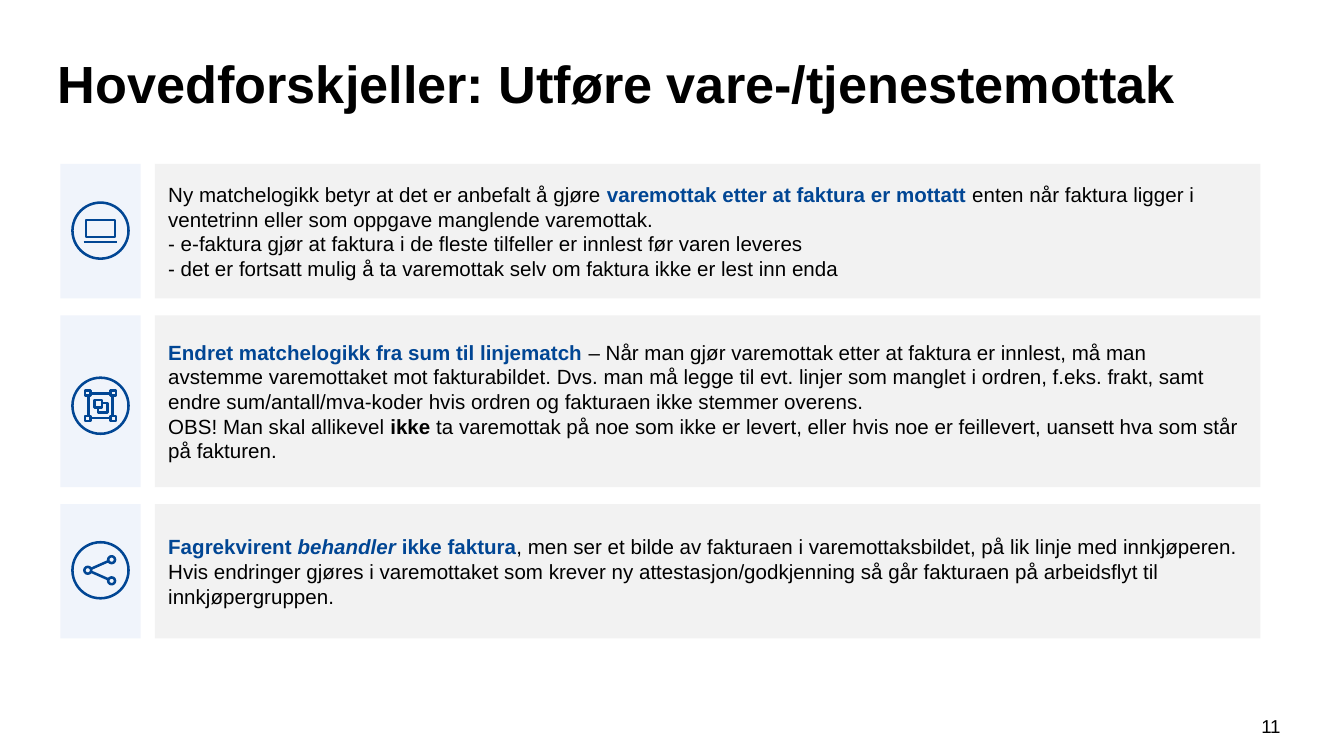
"""Build a slide on the main differences when receiving goods and services."""
from lxml.etree import SubElement
from pptx import Presentation
from pptx.dml.color import RGBColor
from pptx.enum.shapes import MSO_CONNECTOR as Connector, MSO_SHAPE as Shape
from pptx.enum.text import MSO_ANCHOR as Anchor, MSO_AUTO_SIZE as AutoSize, PP_ALIGN as Align
from pptx.oxml.ns import qn
from pptx.util import Cm, Pt

BLACK = RGBColor(0x00, 0x00, 0x00)
BLUE = RGBColor(0x01, 0x46, 0x94)
GREY = RGBColor(0xF2, 0xF2, 0xF2)
PALE_BLUE = RGBColor(0xF0, 0xF4, 0xFB)
STROKE = Pt(1.35)


def add_run(paragraph, text, size=11, color=BLACK, bold=False, italic=False):
    run = paragraph.add_run()
    run.text = text
    font = run.font
    font.name, font.size, font.bold, font.italic = "Arial", Pt(size), bold, italic
    font.color.rgb = color


def add_shape(kind, left, top, width, height, fill, line=None):
    shape = slide.shapes.add_shape(kind, Cm(left), Cm(top), Cm(width), Cm(height))
    shape.shadow.inherit = False
    shape.fill.solid()
    shape.fill.fore_color.rgb = fill
    if line is None:
        shape.line.fill.background()
    else:
        shape.line.color.rgb = line
        shape.line.width = STROKE
    return shape


presentation = Presentation()
presentation.slide_width, presentation.slide_height = Cm(25.4), Cm(14.29)
slide = presentation.slides.add_slide(presentation.slide_layouts[5])

title = slide.shapes.title
title.left, title.top, title.width, title.height = Cm(0.84), Cm(0.84), Cm(23.39), Cm(1.45)
title.text_frame.auto_size = AutoSize.NONE
title.text_frame.vertical_anchor = Anchor.MIDDLE
paragraph = title.text_frame.paragraphs[0]
paragraph.alignment = Align.LEFT
add_run(paragraph, "Hovedforskjeller: Utføre vare-/tjenestemottak", size=28, bold=True)

number_box = slide.shapes.add_textbox(Cm(23.55), Cm(13.39), Cm(0.94), Cm(0.76))
number_box.text_frame.word_wrap = True
paragraph = number_box.text_frame.paragraphs[0]
paragraph.alignment = Align.CENTER
add_run(paragraph, "11", size=10)

PLAIN = {}
BOLD = {"bold": True}
KEY = {"bold": True, "color": BLUE}
KEY_ITALIC = {**KEY, "italic": True}

laptop = {
    "center": 4.36,
    "lines": [[(-0.32, 0.21), (0.32, 0.21)]],
    "outlines": [(Shape.RECTANGLE, 0, -0.04, 0.55, 0.32)],
}
frame = {
    "center": 7.67,
    "lines": [],
    "outlines": [(Shape.RECTANGLE, 0, 0, 0.46, 0.46)]
    + [(Shape.RECTANGLE, x, y, 0.1, 0.1) for x in (-0.24, 0.24) for y in (-0.24, 0.24)]
    + [(Shape.RECTANGLE, 0.04, 0.04, 0.18, 0.18), (Shape.RECTANGLE, -0.04, -0.04, 0.14, 0.14)],
}
network = {
    "center": 10.78,
    "lines": [[(0.21, -0.2), (-0.24, 0), (0.21, 0.2)]],
    "outlines": [(Shape.OVAL, x, y, 0.13, 0.13) for x, y in ((-0.24, 0), (0.21, -0.2), (0.21, 0.2))],
}

rows = [
    (2.54, laptop, [
        [("Ny matchelogikk betyr at det er anbefalt å gjøre ", PLAIN),
         ("varemottak etter at faktura er mottatt ", KEY),
         ("enten når faktura ligger i ventetrinn eller som oppgave manglende varemottak.", PLAIN)],
        [("- e-faktura gjør at faktura i de fleste tilfeller er innlest før varen leveres", PLAIN)],
        [("- det er fortsatt mulig å ta varemottak selv om faktura ikke er lest inn enda", PLAIN)],
    ]),
    (3.25, frame, [
        [("Endret matchelogikk fra sum til linjematch ", KEY),
         ("– Når man gjør varemottak etter at faktura er innlest, må man avstemme varemottaket "
          "mot fakturabildet. Dvs. man må legge til evt. linjer som manglet i ordren, f.eks. frakt, "
          "samt endre sum/antall/mva-koder hvis ordren og fakturaen ikke stemmer overens.", PLAIN)],
        [("OBS! Man skal allikevel ", PLAIN),
         ("ikke ", BOLD),
         ("ta varemottak på noe som ikke er levert, eller hvis noe er feillevert, "
          "uansett hva som står på fakturen.", PLAIN)],
    ]),
    (2.54, network, [
        [("Fagrekvirent ", KEY),
         ("behandler ", KEY_ITALIC),
         ("ikke faktura", KEY),
         (", men ser et bilde av fakturaen i varemottaksbildet, på lik linje med innkjøperen.", PLAIN)],
        [("Hvis endringer gjøres i varemottaket som krever ny attestasjon/godkjenning "
          "så går fakturaen på arbeidsflyt til innkjøpergruppen.", PLAIN)],
    ]),
]

ROW_GAP = 0.32
ICON_LEFT, ICON_WIDTH, RING = 1.14, 1.52, 1.06
top = 3.1
for height, icon, paragraphs in rows:
    panel = add_shape(Shape.RECTANGLE, 2.93, top, 20.89, height, GREY)
    text_frame = panel.text_frame
    text_frame.vertical_anchor = Anchor.MIDDLE
    for index, runs in enumerate(paragraphs):
        paragraph = text_frame.add_paragraph() if index else text_frame.paragraphs[0]
        paragraph.alignment = Align.LEFT
        for text, style in runs:
            add_run(paragraph, text, **style)

    add_shape(Shape.RECTANGLE, ICON_LEFT, top, ICON_WIDTH, height, PALE_BLUE)
    center_x, center_y = ICON_LEFT + ICON_WIDTH / 2, icon["center"]
    add_shape(Shape.OVAL, center_x - RING / 2, center_y - RING / 2, RING, RING, PALE_BLUE, BLUE)
    for line in icon["lines"]:
        start, *others = [(Cm(center_x + x), Cm(center_y + y)) for x, y in line]
        if len(others) == 1:
            stroke = slide.shapes.add_connector(Connector.STRAIGHT, *start, *others[0])
            SubElement(stroke._element.spPr, qn("a:effectLst"))
        else:
            builder = slide.shapes.build_freeform(*start)
            builder.add_line_segments(others, close=False)
            stroke = builder.convert_to_shape()
            stroke.shadow.inherit = False
            stroke.fill.background()
        stroke.line.color.rgb = BLUE
        stroke.line.width = STROKE
    for kind, x, y, width, depth in icon["outlines"]:
        add_shape(kind, center_x + x - width / 2, center_y + y - depth / 2, width, depth, PALE_BLUE, BLUE)
    top += height + ROW_GAP

presentation.save("out.pptx")
